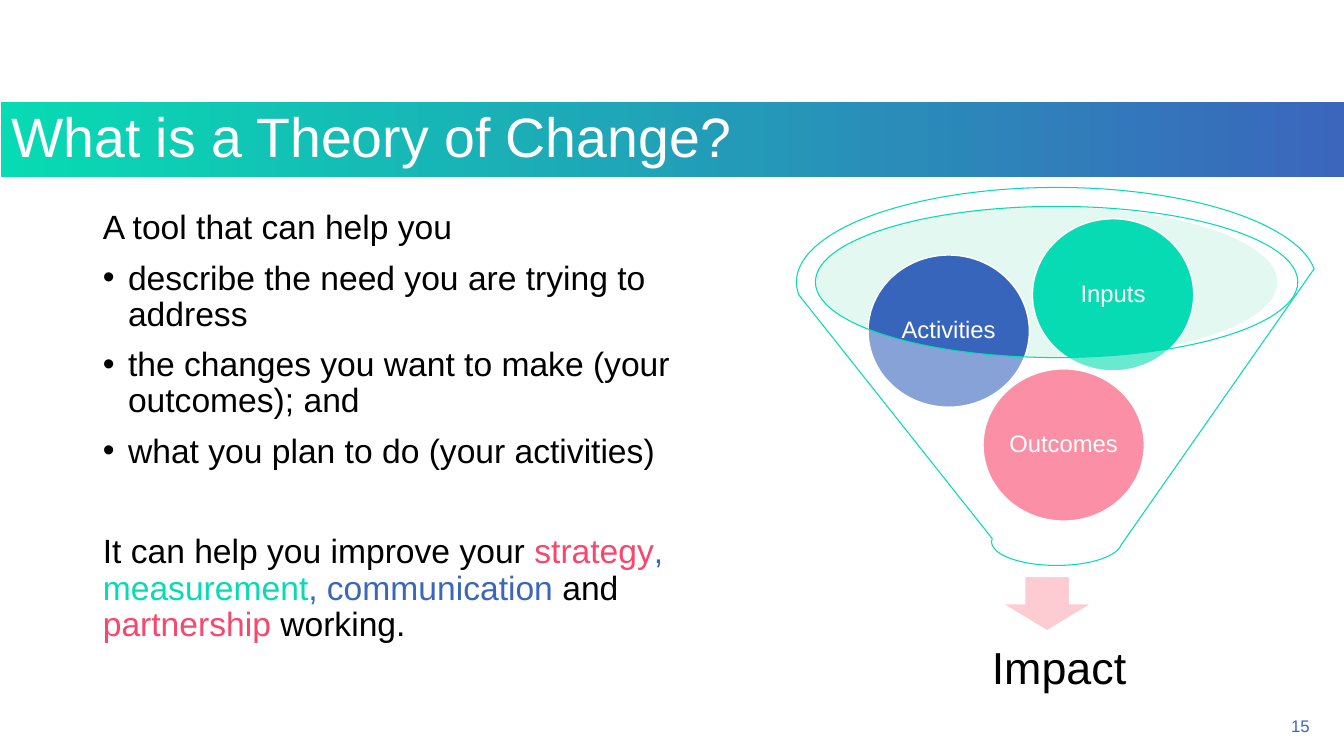
from dataclasses import dataclass

import pptx
import pptx.dml.color
import pptx.enum.shapes
import pptx.enum.text
import pptx.oxml
import pptx.oxml.ns
import pptx.util

Inches = pptx.util.Inches
Pt = pptx.util.Pt
ALIGN = pptx.enum.text.PP_ALIGN
ANCHOR = pptx.enum.text.MSO_ANCHOR
SHAPE = pptx.enum.shapes.MSO_SHAPE

BLACK, WHITE = "000000", "FFFFFF"
GREEN, BLUE, PINK = "07DBB3", "3B66BC", "F9466C"


@dataclass
class Ball:
    label: str
    left: float
    top: float
    color: str


@dataclass
class Line:
    runs: list[tuple[str, str]]
    bullet: bool = False
    space_before: float = 10


BALLS = [
    Ball("Outcomes", 9.75, 3.66, "F9456A"),
    Ball("Activities", 8.61, 2.53, "3865BC"),
    Ball("Inputs", 10.24, 2.17, GREEN),
]
LINES = [
    Line([("A tool that can help you", BLACK)], space_before=0),
    Line([("describe the need you are trying to address", BLACK)], bullet=True),
    Line([("the changes you want to make (your outcomes); and", BLACK)], bullet=True),
    Line([("what you plan to do (your activities)", BLACK)], bullet=True),
    Line([
        ("It can help you improve your ", BLACK),
        ("strategy", PINK),
        (", ", BLUE),
        ("measurement", GREEN),
        (", communication ", BLUE),
        ("and ", BLACK),
        ("partnership ", PINK),
        ("working.", BLACK),
    ], space_before=46),
]


def rgb(color: str) -> pptx.dml.color.RGBColor:
    return pptx.dml.color.RGBColor.from_string(color)


def apply(target, formats: dict) -> None:
    for name, value in formats.items():
        setattr(target, name, value)


def place(shape, left: float, top: float, width: float, height: float) -> None:
    apply(shape, {"left": Inches(left), "top": Inches(top),
                  "width": Inches(width), "height": Inches(height)})


def add_run(paragraph, text: str, size: float, color: str) -> None:
    run = paragraph.add_run()
    run.text = text
    apply(run.font, {"name": "Arial", "size": Pt(size)})
    run.font.color.rgb = rgb(color)


def write(shape, text: str, size: float, color: str, align=ALIGN.CENTER,
          anchor=ANCHOR.MIDDLE, spacing: float = 0.9) -> None:
    frame = shape.text_frame
    apply(frame, {"word_wrap": True, "vertical_anchor": anchor,
                  "auto_size": pptx.enum.text.MSO_AUTO_SIZE.NONE})
    paragraph = frame.paragraphs[0]
    apply(paragraph, {"alignment": align, "line_spacing": spacing, "space_before": Pt(0)})
    add_run(paragraph, text, size, color)


def paint(shape, fill: str, line: str | None = None, width: float = 1,
          opacity: int = 100) -> None:
    shape.shadow.inherit = False
    shape.fill.solid()
    shape.fill.fore_color.rgb = rgb(fill)
    if opacity < 100:
        srgb = shape.fill._xPr.find(".//" + pptx.oxml.ns.qn("a:srgbClr"))
        srgb.append(pptx.oxml.parse_xml(
            f'<a:alpha {pptx.oxml.ns.nsdecls("a")} val="{opacity * 1000}"/>'))
    if line:
        shape.line.color.rgb = rgb(line)
        shape.line.width = Pt(width)
    else:
        shape.line.fill.background()


def add_preset(slide, kind, left: float, top: float, width: float, height: float):
    return slide.shapes.add_shape(kind, Inches(left), Inches(top),
                                  Inches(width), Inches(height))


def add_text(slide, left: float, top: float, width: float, height: float):
    return slide.shapes.add_textbox(Inches(left), Inches(top),
                                    Inches(width), Inches(height))


def set_bullet(paragraph, bullet: bool) -> None:
    properties = paragraph._p.get_or_add_pPr()
    indent = Inches(0.25) if bullet else 0
    properties.set("marL", str(indent))
    properties.set("indent", str(-indent))
    tags = ['<a:buFont {} typeface="Arial"/>', '<a:buChar {} char="•"/>'] if bullet else ["<a:buNone {}/>"]
    for tag in tags:
        properties.append(pptx.oxml.parse_xml(tag.format(pptx.oxml.ns.nsdecls("a"))))


def main() -> None:
    deck = pptx.Presentation()
    apply(deck, {"slide_width": Inches(13.33), "slide_height": Inches(7.5)})
    slide = deck.slides.add_slide(deck.slide_layouts[1])

    # Title band
    title = slide.shapes.title
    place(title, 0.01, 1.01, 13.33, 0.75)
    title.fill.gradient()
    title.fill.gradient_angle = 0
    for stop, position, color in zip(title.fill.gradient_stops, (0, 1), (GREEN, BLUE)):
        stop.position = position
        stop.color.rgb = rgb(color)
    write(title, "What is a Theory of Change?", 39.6, WHITE, ALIGN.LEFT)

    # Explanation
    explanation = slide.placeholders[1]
    place(explanation, 0.92, 2.04, 6.5, 4.93)
    frame = explanation.text_frame
    apply(frame, {"word_wrap": True, "vertical_anchor": ANCHOR.TOP,
                  "auto_size": pptx.enum.text.MSO_AUTO_SIZE.NONE})
    for index, line in enumerate(LINES):
        paragraph = frame.add_paragraph() if index else frame.paragraphs[0]
        set_bullet(paragraph, line.bullet)
        apply(paragraph, {"line_spacing": 0.9, "space_before": Pt(line.space_before)})
        for text, color in line.runs:
            add_run(paragraph, text, 24, color)

    # Funnel opening and the arrow below
    paint(add_preset(slide, SHAPE.OVAL, 8.09, 2.05, 4.58, 1.5), "BAEEDD", opacity=40)
    paint(add_preset(slide, SHAPE.DOWN_ARROW, 9.94, 5.72, 0.89, 0.54), "FCCCD2", WHITE)

    # Result, set slightly right of the arrow
    impact = add_text(slide, 8.25, 6.15, 4.26, 1)
    apply(impact.text_frame, {"margin_left": Inches(0.5), "margin_right": Inches(0.25)})
    write(impact, "Impact", 32, BLACK)

    # Balls, with the funnel's front over them
    for ball in BALLS:
        circle = add_preset(slide, SHAPE.OVAL, ball.left, ball.top, 1.6, 1.51)
        paint(circle, ball.color, WHITE)
        apply(circle.text_frame, {"margin_left": 0, "margin_right": 0})
        write(circle, ball.label, 17, WHITE)
    funnel = add_preset(slide, SHAPE.FUNNEL, 7.9, 1.86, 5.16, 3.75)
    paint(funnel, WHITE, "05DAB0", 0.75, opacity=40)

    # Page number
    write(add_text(slide, 10.09, 7.1, 3, 0.25), "15", 12, BLUE,
          ALIGN.RIGHT, ANCHOR.BOTTOM, 1.0)

    deck.save("out.pptx")


if __name__ == "__main__":
    main()
